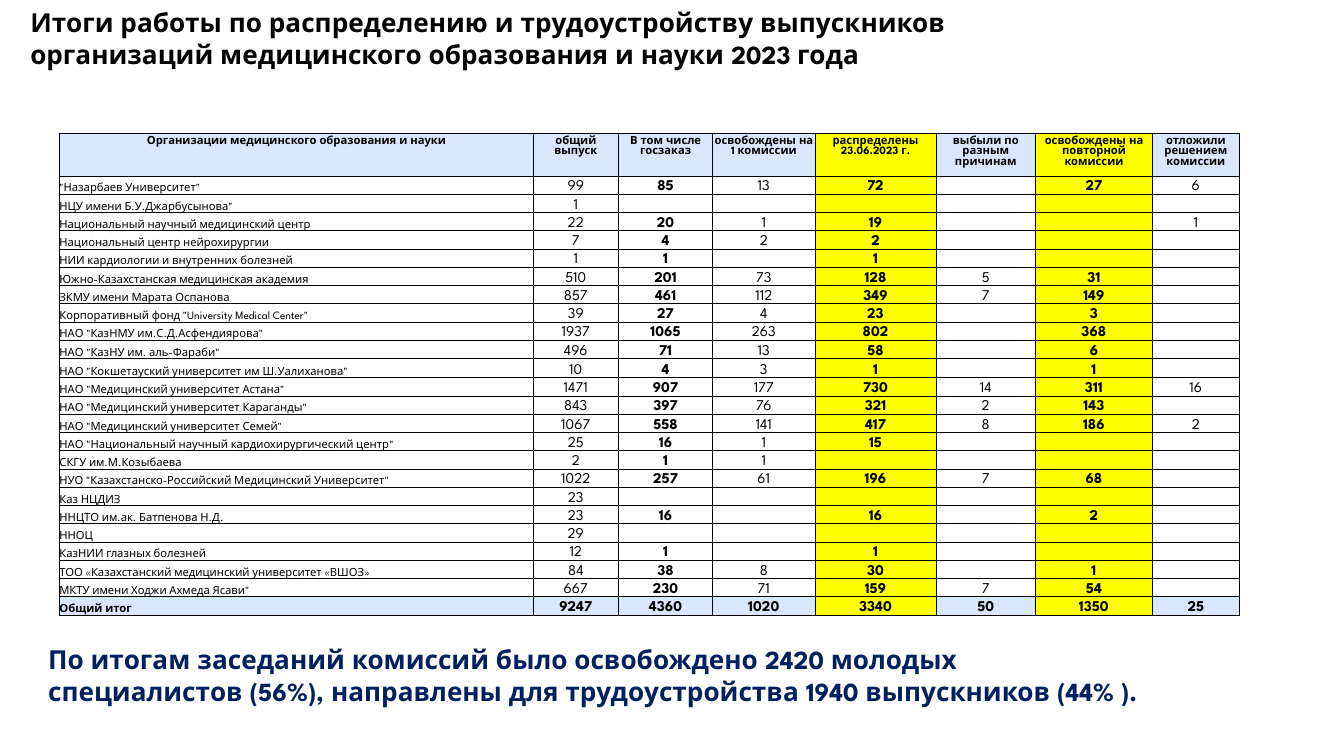
import pptx
import pptx.dml.color
import pptx.enum.text
import pptx.oxml
import pptx.oxml.ns
import pptx.util
import lxml.etree

Pt = pptx.util.Pt
ALIGN = pptx.enum.text.PP_ALIGN
ANCHOR = pptx.enum.text.MSO_ANCHOR
AUTO_SIZE = pptx.enum.text.MSO_AUTO_SIZE

TITLE = "Итоги работы по распределению и трудоустройству выпускников организаций медицинского образования и науки 2023 года"
SUMMARY = "По итогам заседаний комиссий было освобождено 2420 молодых специалистов (56%), направлены для трудоустройства 1940 выпускников (44% )."

HEADER = (
    "Организации медицинского образования и науки",
    "общий выпуск",
    "В том числе госзаказ",
    "освобождены на 1 комиссии",
    "распределены 23.06.2023 г.",
    "выбыли по разным причинам",
    "освобождены на повторной комиссии",
    "отложили решением комиссии",
)
ORGANIZATIONS = [
    ('"Назарбаев Университет"', 99, 85, 13, 72, "", 27, 6),
    ('НЦУ имени Б.У.Джарбусынова"', 1, "", "", "", "", "", ""),
    ("Национальный научный медицинский центр", 22, 20, 1, 19, "", "", 1),
    ("Национальный центр нейрохирургии", 7, 4, 2, 2, "", "", ""),
    ("НИИ кардиологии и внутренних болезней", 1, 1, "", 1, "", "", ""),
    ("Южно-Казахстанская медицинская академия", 510, 201, 73, 128, 5, 31, ""),
    ("ЗКМУ имени Марата Оспанова", 857, 461, 112, 349, 7, 149, ""),
    ('Корпоративный фонд "University Medical Center"', 39, 27, 4, 23, "", 3, ""),
    ('НАО "КазНМУ им.С.Д.Асфендиярова"', 1937, 1065, 263, 802, "", 368, ""),
    ('НАО "КазНУ им. аль-Фараби"', 496, 71, 13, 58, "", 6, ""),
    ('НАО "Кокшетауский университет им Ш.Уалиханова"', 10, 4, 3, 1, "", 1, ""),
    ('НАО "Медицинский университет Астана"', 1471, 907, 177, 730, 14, 311, 16),
    ('НАО "Медицинский университет Караганды"', 843, 397, 76, 321, 2, 143, ""),
    ('НАО "Медицинский университет Семей"', 1067, 558, 141, 417, 8, 186, 2),
    ('НАО "Национальный научный кардиохирургический центр"', 25, 16, 1, 15, "", "", ""),
    ("СКГУ им.М.Козыбаева", 2, 1, 1, "", "", "", ""),
    ('НУО "Казахстанско-Российский Медицинский Университет"', 1022, 257, 61, 196, 7, 68, ""),
    ("Каз НЦДИЗ", 23, "", "", "", "", "", ""),
    ("ННЦТО им.ак. Батпенова Н.Д.", 23, 16, "", 16, "", 2, ""),
    ("ННОЦ", 29, "", "", "", "", "", ""),
    ("КазНИИ глазных болезней", 12, 1, "", 1, "", "", ""),
    ("ТОО «Казахстанский медицинский университет «ВШОЗ»", 84, 38, 8, 30, "", 1, ""),
    ('МКТУ имени Ходжи Ахмеда Ясави"', 667, 230, 71, 159, 7, 54, ""),
]
TOTAL = ("Общий итог", 9247, 4360, 1020, 3340, 50, 1350, 25)

FONT = "League Spartan"
BLACK, NAVY, PALE_BLUE, YELLOW = "000000", "002060", "D9E7FD", "FFFF00"
COLUMN_WIDTHS = (253.8, 45.8, 50.4, 54.9, 64.8, 53.3, 62.6, 46.6)
HEADER_HEIGHT, ROW_HEIGHT, TALL_ROW_HEIGHT, TALL_ROW = 22.8, 9.8, 10.3, 11
HEADER_TOP_MARGIN = 1.8
BOLD_COLUMNS = (2, 4, 6)
YELLOW_COLUMNS = (4, 6)


def rgb(value):
    return pptx.dml.color.RGBColor.from_string(value)


def write(frame, text, size, color, bold, align=ALIGN.LEFT):
    frame.text = text
    paragraph = frame.paragraphs[0]
    paragraph.alignment = align
    for run in paragraph.runs:
        run.font.name = FONT
        run.font.size = Pt(size)
        run.font.bold = bold
        run.font.color.rgb = rgb(color)
    if not text:
        end = lxml.etree.SubElement(paragraph._p, pptx.oxml.ns.qn("a:endParaRPr"))
        end.set("sz", str(size * 100))
        lxml.etree.SubElement(end, pptx.oxml.ns.qn("a:latin")).set("typeface", FONT)


def add_borders(cell):
    properties = cell._tc.get_or_add_tcPr()
    for side in ("lnL", "lnR", "lnT", "lnB"):
        properties.append(pptx.oxml.parse_xml(
            f'<a:{side} {pptx.oxml.ns.nsdecls("a")} w="{Pt(0.5)}">'
            f'<a:solidFill><a:srgbClr val="{BLACK}"/></a:solidFill></a:{side}>'))


def fill_cell(cell, value, row, column, last_row):
    is_header, is_edge = row == 0, row in (0, last_row)
    cell.margin_left = cell.margin_right = cell.margin_bottom = 0
    cell.margin_top = Pt(HEADER_TOP_MARGIN if is_header else 0)
    cell.vertical_anchor = ANCHOR.TOP if is_header else ANCHOR.BOTTOM
    add_borders(cell)
    if column in YELLOW_COLUMNS or is_edge:
        cell.fill.solid()
        cell.fill.fore_color.rgb = rgb(YELLOW if column in YELLOW_COLUMNS else PALE_BLUE)
    else:
        cell.fill.background()
    is_name = column == 0 and not is_header
    write(cell.text_frame, str(value), 6 if is_header or is_name else 8, BLACK,
          is_edge or column in BOLD_COLUMNS, ALIGN.LEFT if is_name else ALIGN.CENTER)


def add_results(slide):
    rows = [HEADER, *ORGANIZATIONS, TOTAL]
    heights = [HEADER_HEIGHT] + [ROW_HEIGHT] * (len(rows) - 1)
    heights[TALL_ROW] = TALL_ROW_HEIGHT
    results = slide.shapes.add_table(
        len(rows), len(HEADER), Pt(31.8), Pt(71.5),
        Pt(sum(COLUMN_WIDTHS)), Pt(sum(heights))).table
    results.first_row = results.horz_banding = False
    for column, width in zip(results.columns, COLUMN_WIDTHS):
        column.width = Pt(width)
    for row, (values, height) in enumerate(zip(rows, heights)):
        results.rows[row].height = Pt(height)
        for column, value in enumerate(values):
            fill_cell(results.cell(row, column), value, row, column, len(rows) - 1)


def main():
    deck = pptx.Presentation()
    deck.slide_width, deck.slide_height = Pt(720), Pt(405)
    slide = deck.slides.add_slide(deck.slide_layouts[5])

    title = slide.shapes.title
    title.left, title.top, title.width, title.height = Pt(0), Pt(0), Pt(522.7), Pt(34.6)
    heading = title.text_frame
    heading.word_wrap = True
    heading.auto_size = AUTO_SIZE.NONE
    heading.vertical_anchor = ANCHOR.TOP
    heading.margin_left, heading.margin_right = Pt(16.2), Pt(7.2)
    heading.margin_top = heading.margin_bottom = Pt(3.6)
    write(heading, TITLE, 14, BLACK, True)

    add_results(slide)

    summary = slide.shapes.add_textbox(Pt(18.7), Pt(341.3), Pt(598.3), Pt(41)).text_frame
    summary.word_wrap = True
    summary.auto_size = AUTO_SIZE.SHAPE_TO_FIT_TEXT
    write(summary, SUMMARY, 14, NAVY, True)

    deck.save("out.pptx")


if __name__ == "__main__":
    main()
